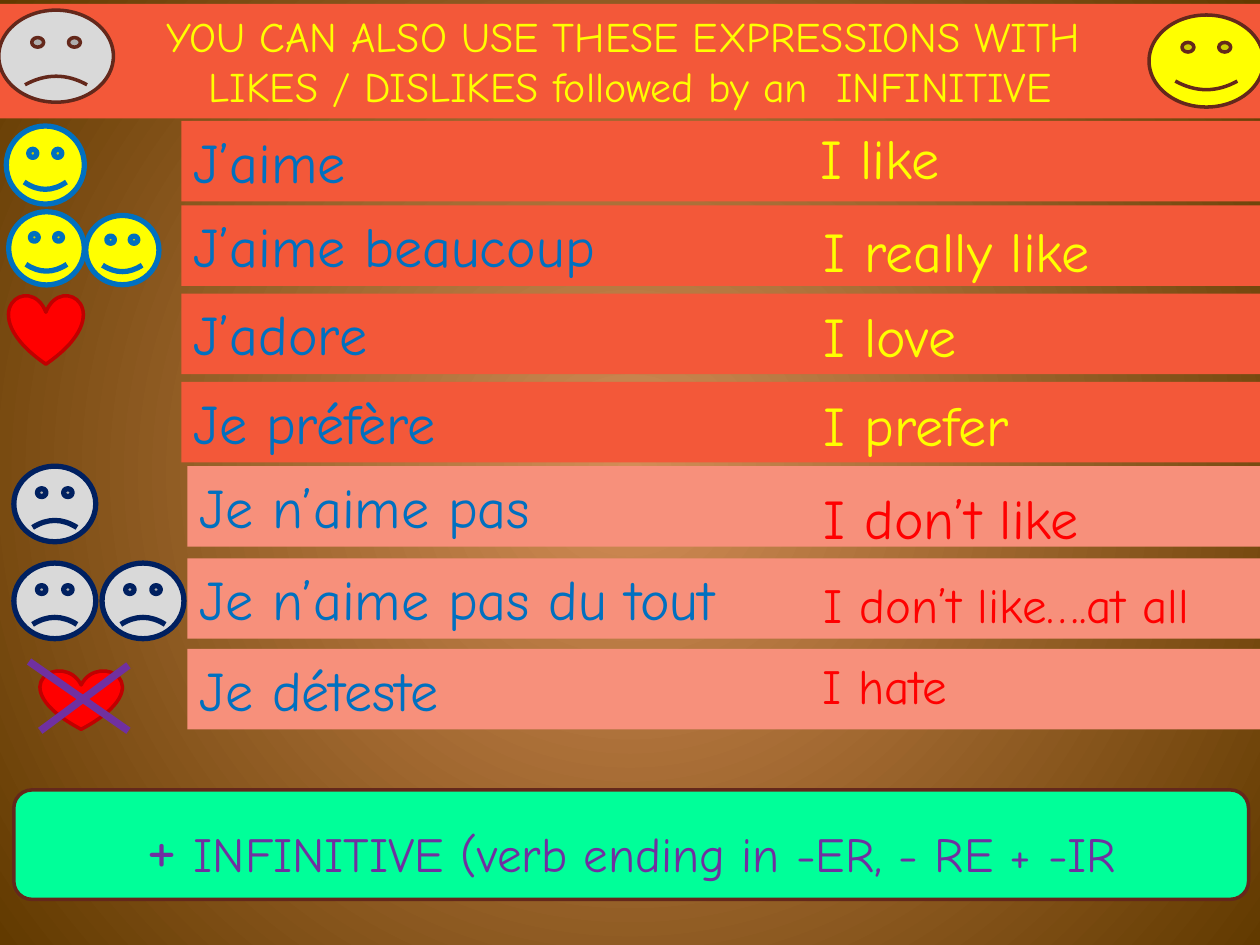
from lxml.etree import SubElement
from pptx import Presentation
from pptx.dml.color import RGBColor
from pptx.enum.shapes import MSO_CONNECTOR, MSO_SHAPE
from pptx.enum.text import MSO_ANCHOR, MSO_AUTO_SIZE, PP_ALIGN
from pptx.oxml.ns import qn
from pptx.util import Pt

FONT = "Comic Neue"
YELLOW, RED, BLUE, PURPLE = "FFFF00", "FF0000", "0070C0", "7030A0"
ORANGE, SALMON, GREY, NAVY, BROWN = "F35839", "F7907B", "D9D9D9", "002060", "64281B"


def rgb(value):
    return RGBColor.from_string(value)


def write(tf, *paragraphs, size=32, color=BLUE, align=PP_ALIGN.LEFT, anchor=MSO_ANCHOR.TOP):
    """Each paragraph is a string or a list of (text, size) runs."""
    tf.word_wrap = True
    tf.auto_size = MSO_AUTO_SIZE.NONE
    tf.vertical_anchor = anchor
    for i, runs in enumerate(paragraphs):
        p = tf.add_paragraph() if i else tf.paragraphs[0]
        p.alignment = align
        for text, points in [(runs, size)] if isinstance(runs, str) else runs:
            r = p.add_run()
            r.text = text
            r.font.name = FONT
            r.font.size = Pt(points)
            r.font.color.rgb = rgb(color)


class Deck:
    def __init__(self, s):
        self.s = s

    def background(self, centre, edge):
        fill = self.s.background.fill
        fill.gradient()
        for stop, color in zip(fill.gradient_stops, (centre, edge)):
            stop.color.rgb = rgb(color)
        # Radial gradient from the middle of the slide
        grad = self.s._element.find(".//" + qn("a:gradFill"))
        grad.remove(grad.find(qn("a:lin")))
        circle = SubElement(grad, qn("a:path"), path="circle")
        SubElement(circle, qn("a:fillToRect"), l="50000", t="50000", r="50000", b="50000")

    def title(self, box, fill, *lines, **fmt):
        sp = self.s.shapes.title
        sp.left, sp.top, sp.width, sp.height = map(Pt, box)
        sp.fill.solid()
        sp.fill.fore_color.rgb = rgb(fill)
        write(sp.text_frame, *lines, **fmt)

    def shape(self, kind, box, fill, line=None, weight=2):
        sp = self.s.shapes.add_shape(kind, *map(Pt, box))
        sp.shadow.inherit = False
        sp.fill.solid()
        sp.fill.fore_color.rgb = rgb(fill)
        if line:
            sp.line.color.rgb = rgb(line)
            sp.line.width = Pt(weight)
        else:
            sp.line.fill.background()
        return sp

    def face(self, box, line, weight=3, happy=True):
        sp = self.shape(MSO_SHAPE.SMILEY_FACE, box, YELLOW if happy else GREY, line, weight)
        if not happy:
            sp.adjustments[0] = -0.047

    def heart(self, box):
        self.shape(MSO_SHAPE.HEART, box, RED, "C00000")

    def text(self, box, text, **fmt):
        write(self.s.shapes.add_textbox(*map(Pt, box)).text_frame, text, **fmt)

    def line(self, ends, color, weight):
        c = self.s.shapes.add_connector(MSO_CONNECTOR.STRAIGHT, *map(Pt, ends))
        c.line.color.rgb = rgb(color)
        c.line.width = Pt(weight)
        SubElement(c._element.spPr, qn("a:effectLst"))


def main():
    prs = Presentation()
    prs.slide_width, prs.slide_height = Pt(720), Pt(540)
    d = Deck(prs.slides.add_slide(prs.slide_layouts[5]))
    d.background("D38D57", "623A00")

    # Heading with a face at each end
    d.title((0, 2.2, 720, 65.4), ORANGE,
            "YOU CAN ALSO USE THESE EXPRESSIONS WITH ",
            "LIKES / DISLIKES followed by an  INFINITIVE",
            size=24, color=YELLOW, align=PP_ALIGN.CENTER)
    d.face((-0.7, 5.8, 65.5, 52.6), BROWN, 2, happy=False)
    d.face((656.6, 8.6, 65.5, 52.6), BROWN, 2)

    # Expression bands: band top, French, English, English left, top and size
    likes = [
        (69.1, "J’aime", "I like", 461.5, 67, 32),
        (117.4, "J’aime beaucoup", "I really like", 463.7, 120.2, 32),
        (167.8, "J’adore", "I love", 463.7, 168.5, 32),
        (218.2, "Je préfère", "I prefer", 463.7, 219.6, 32),
    ]
    dislikes = [
        (266.4, "Je n’aime pas", "I don’t like", 463.7, 272.9, 32),
        (319, "Je n’aime pas du tout", "I don’t like….at all", 463.7, 324.7, 28),
        (370.8, "Je déteste", "I hate", 463, 370.8, 28),
    ]
    for rows, left, fill, color in ((likes, 103.7, ORANGE, YELLOW),
                                    (dislikes, 107, SALMON, RED)):
        for top, french, english, x, y, size in rows:
            band = d.shape(MSO_SHAPE.RECTANGLE, (left, top, 720 - left, 46), fill)
            write(band.text_frame, french)
            d.text((x, y, 720 - x, 46), english, size=size, color=color)

    # Faces and hearts beside the bands
    for box in ((3.6, 72, 44.6, 44.6), (5, 121, 43.2, 41.8), (49, 123.1, 41.8, 39.6)):
        d.face(box, BLUE)
    for x, y in ((7.9, 266.4), (7.9, 321.8), (58.3, 321.8)):
        d.face((x, y, 46.8, 43.2), NAVY, happy=False)
    d.heart((5, 168.5, 42.5, 39.6))
    d.heart((23, 383, 46.8, 33.8))
    for ends in ((16.6, 378, 73.4, 417.6), (23, 417.6, 73.4, 380.2)):
        d.line(ends, PURPLE, 4.25)

    # Rule at the bottom
    rule = d.shape(MSO_SHAPE.ROUNDED_RECTANGLE, (7.9, 451.4, 705.6, 62.6), "00FF99", BROWN)
    write(rule.text_frame, [("+", 40), (" INFINITIVE (verb ending in -ER, - RE + -IR", 28)],
          color=PURPLE, align=PP_ALIGN.CENTER, anchor=MSO_ANCHOR.MIDDLE)

    prs.save("out.pptx")


if __name__ == "__main__":
    main()
